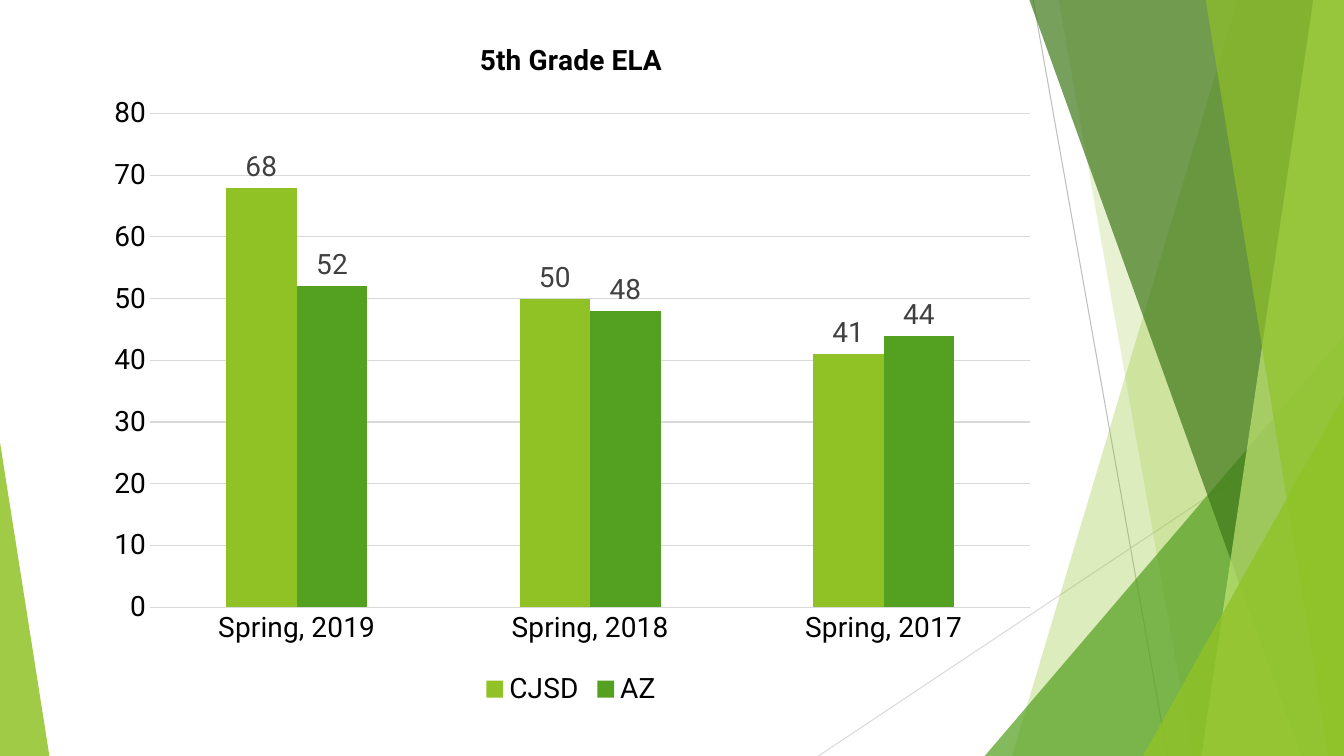
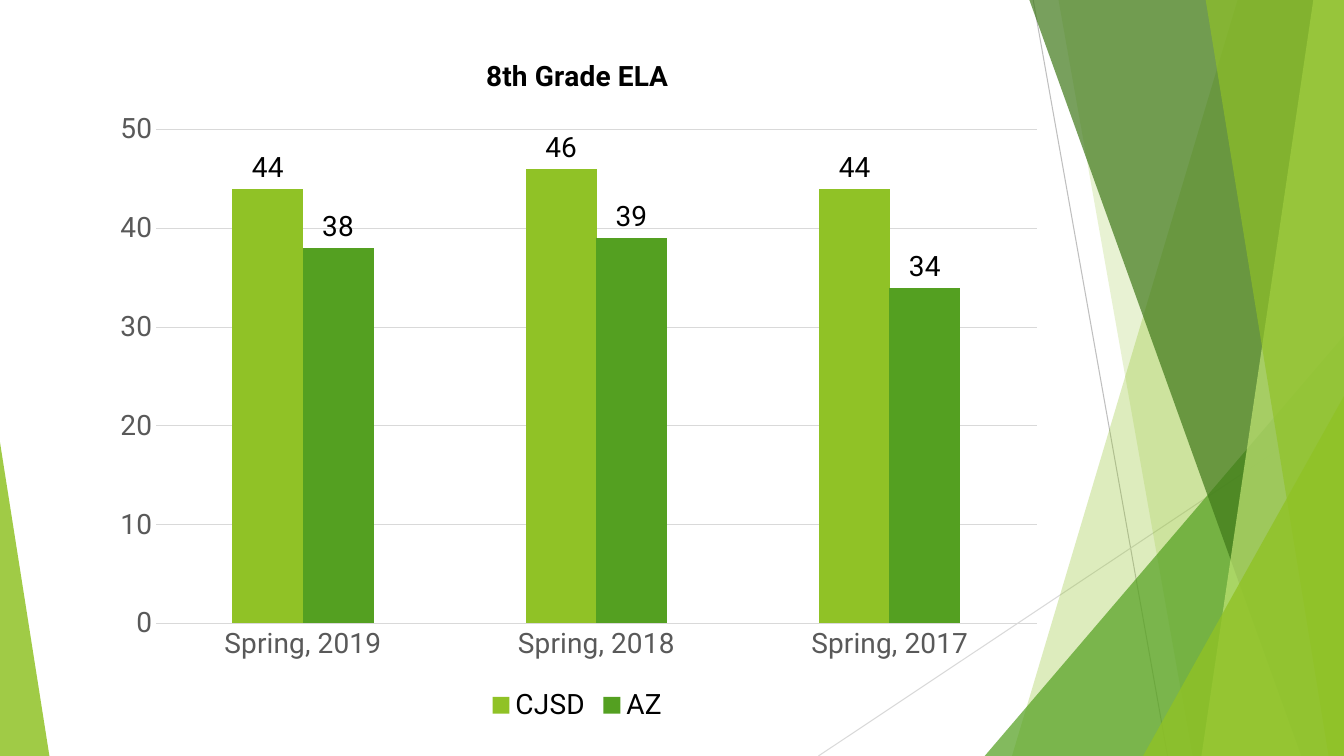
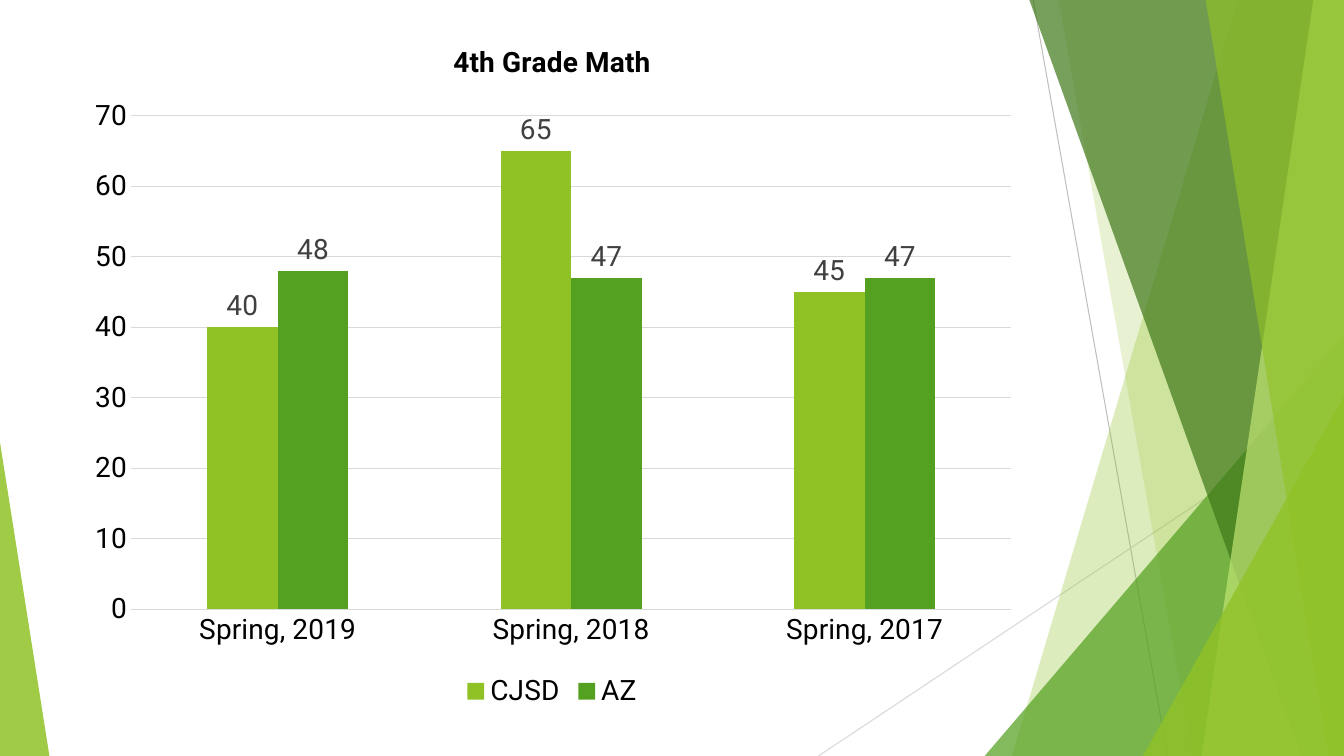
"""Builds three slides of clustered column charts on a shared backdrop of green wedges."""
import dataclasses

import lxml.etree
import pptx
import pptx.chart.data
import pptx.dml.color
import pptx.enum.chart
import pptx.enum.shapes
import pptx.oxml.ns
import pptx.util

Pt = pptx.util.Pt
qn = pptx.oxml.ns.qn


@dataclasses.dataclass(frozen=True)
class Theme:
    font: str = "Roboto"
    size: int = 20
    base_size: int = 10
    hairline: float = 0.75
    lime: str = "90C226"
    green: str = "54A021"
    forest: str = "3F7819"
    pale: str = "C0E474"
    black: str = "000000"
    charcoal: str = "404040"
    gray: str = "595959"
    silver: str = "BFBFBF"
    mist: str = "D9D9D9"


class Deck:
    width, height = 960, 540
    plot_area = {"x": 0.06, "y": 0.14, "w": 0.92, "h": 0.71}

    def __init__(self, theme):
        self.theme = theme
        self.presentation = pptx.Presentation()
        self.presentation.slide_width = Pt(self.width)
        self.presentation.slide_height = Pt(self.height)
        self.layout = self.presentation.slide_layouts[6]
        self.slide = None

    def add_slide(self):
        self.slide = self.presentation.slides.add_slide(self.layout)

    def color(self, value):
        return pptx.dml.color.RGBColor.from_string(value)

    def paint(self, shape, color, opacity):
        shape.shadow.inherit = False
        shape.fill.solid()
        shape.fill.fore_color.rgb = self.color(color)
        shape.line.fill.background()
        tint = shape.element.spPr.find(".//" + qn("a:srgbClr"))
        alpha = lxml.etree.SubElement(tint, qn("a:alpha"))
        alpha.set("val", str(opacity * 1000))

    def ray(self, start, end, color):
        ray = self.slide.shapes.add_connector(
            pptx.enum.shapes.MSO_CONNECTOR.STRAIGHT,
            *(Pt(value) for value in start + end))
        ray.line.color.rgb = self.color(color)
        ray.line.width = Pt(self.theme.hairline)
        lxml.etree.SubElement(ray.element.spPr, qn("a:effectLst"))

    def wedge(self, top_x, bottom_x, color, opacity):
        top = Pt(-0.6)
        outline = self.slide.shapes.build_freeform(Pt(top_x), top)
        outline.add_line_segments([
            (Pt(self.width), top),
            (Pt(self.width), Pt(self.height)),
            (Pt(bottom_x), Pt(self.height)),
        ])
        self.paint(outline.convert_to_shape(), color, opacity)

    def corner(self, left, top, width, apex, color, opacity):
        corner = self.slide.shapes.add_shape(
            pptx.enum.shapes.MSO_SHAPE.ISOSCELES_TRIANGLE,
            Pt(left), Pt(top), Pt(width), Pt(self.height - top))
        corner.adjustments[0] = apex
        self.paint(corner, color, opacity)

    def backdrop(self):
        theme = self.theme
        for placeholder in list(self.layout.placeholders):
            self.layout.shapes.element.remove(placeholder.element)
        self.ray((738, 0), (834, 540), theme.silver)
        self.ray((960, 290), (584.6, 540), theme.mist)
        self.wedge(884.2, 722.9, theme.lime, 30)
        self.wedge(756, 851.8, theme.lime, 20)
        self.corner(703.4, 239.8, 256.6, 1, theme.green, 72)
        self.wedge(735.1, 929.5, theme.forest, 70)
        self.wedge(938.2, 858.2, theme.pale, 70)
        self.wedge(861.1, 949, theme.lime, 65)
        self.corner(816.5, 283, 143.5, 1, theme.lime, 80)
        self.corner(0, 316, 35.3, 0, theme.lime, 85)
        for shape in list(self.slide.shapes):
            self.layout.shapes.element.append(shape.element)

    def style(self, font, color, bold=False):
        font.name = self.theme.font
        font.size = Pt(self.theme.size)
        font.bold = bold
        font.color.rgb = self.color(color)

    def fix_plot_area(self, chart):
        plot_area = chart.element.find(".//" + qn("c:plotArea"))
        for automatic in plot_area.findall(qn("c:layout")):
            plot_area.remove(automatic)
        layout = lxml.etree.Element(qn("c:layout"))
        plot_area.insert(0, layout)
        manual = lxml.etree.SubElement(layout, qn("c:manualLayout"))
        settings = {"layoutTarget": "inner", "xMode": "edge", "yMode": "edge", **self.plot_area}
        for name, value in settings.items():
            lxml.etree.SubElement(manual, qn("c:" + name)).set("val", str(value))

    def score_chart(self, title, left, top, scores, maximum, axis_color, label_color, overlap=0):
        theme = self.theme
        results = pptx.chart.data.CategoryChartData()
        results.categories = ["Spring, 2019", "Spring, 2018", "Spring, 2017"]
        for group, values in scores.items():
            results.add_series(group, values)
        chart = self.slide.shapes.add_chart(
            pptx.enum.chart.XL_CHART_TYPE.COLUMN_CLUSTERED,
            Pt(left), Pt(top), Pt(683.5), Pt(496.8), results).chart
        chart.font.name = theme.font
        chart.font.size = Pt(theme.base_size)
        chart.font.color.rgb = self.color(theme.black)

        chart.has_title = True
        chart.chart_title.include_in_layout = False
        heading = chart.chart_title.text_frame
        heading.text = title
        self.style(heading.paragraphs[0].font, theme.black, bold=True)

        chart.has_legend = True
        chart.legend.position = pptx.enum.chart.XL_LEGEND_POSITION.BOTTOM
        chart.legend.include_in_layout = False
        self.style(chart.legend.font, theme.black)

        seasons, scale = chart.category_axis, chart.value_axis
        for axis in (seasons, scale):
            axis.major_tick_mark = pptx.enum.chart.XL_TICK_MARK.NONE
            axis.minor_tick_mark = pptx.enum.chart.XL_TICK_MARK.NONE
            self.style(axis.tick_labels.font, axis_color)
        scale.minimum_scale, scale.maximum_scale, scale.major_unit = 0, maximum, 10
        scale.format.line.fill.background()
        for line in (seasons.format.line, scale.major_gridlines.format.line):
            line.color.rgb = self.color(theme.mist)
            line.width = Pt(theme.hairline)

        columns = chart.plots[0]
        columns.gap_width = 215
        columns.overlap = overlap
        columns.vary_by_categories = False
        for group, color in zip(columns.series, (theme.lime, theme.green)):
            group.format.fill.solid()
            group.format.fill.fore_color.rgb = self.color(color)
            labels = group.data_labels
            labels.show_value = True
            labels.position = pptx.enum.chart.XL_LABEL_POSITION.OUTSIDE_END
            self.style(labels.font, label_color)
        self.fix_plot_area(chart)


def main():
    theme = Theme()
    deck = Deck(theme)
    deck.add_slide()
    deck.backdrop()
    deck.score_chart("5th Grade ELA", 66.2, 11.5,
                     {"CJSD": (68, 50, 41), "AZ": (52, 48, 44)},
                     80, theme.black, theme.charcoal)
    deck.add_slide()
    deck.score_chart("8th Grade ELA", 70.6, 23,
                     {"CJSD": (44, 46, 44), "AZ": (38, 39, 34)},
                     50, theme.gray, theme.black, overlap=1)
    deck.add_slide()
    deck.score_chart("4th Grade Math", 52.6, 13,
                     {"CJSD": (40, 65, 45), "AZ": (48, 47, 47)},
                     70, theme.black, theme.charcoal)
    deck.presentation.save("out.pptx")


if __name__ == "__main__":
    main()
